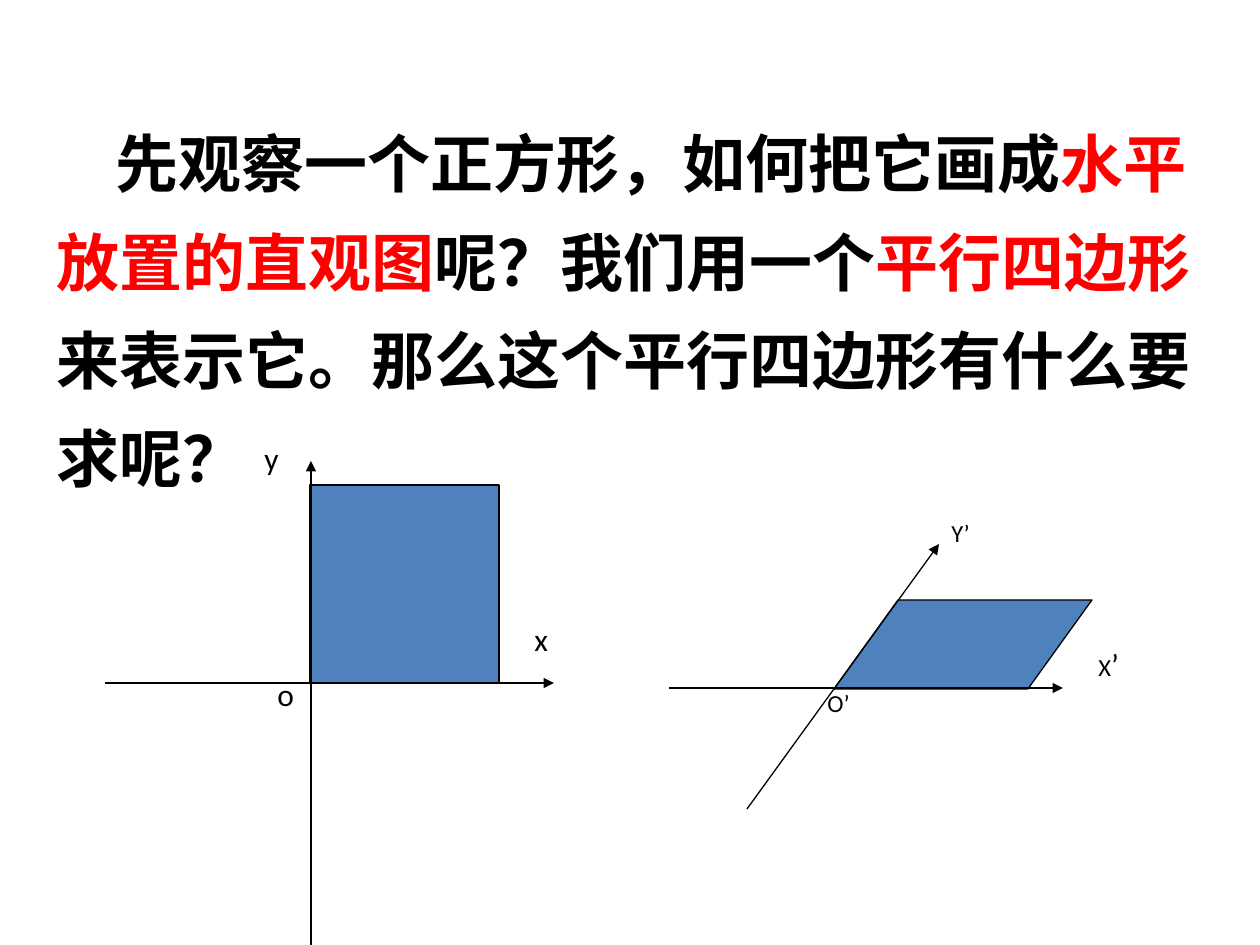
from lxml import etree
from pptx import Presentation
from pptx.dml.color import RGBColor
from pptx.enum.shapes import MSO_CONNECTOR, MSO_SHAPE
from pptx.enum.text import MSO_AUTO_SIZE
from pptx.oxml.ns import qn
from pptx.util import Emu, Pt

PX_PER_INCH = 126
BLACK = RGBColor(0x00, 0x00, 0x00)
RED = RGBColor(0xFF, 0x00, 0x00)
BLUE = RGBColor(0x4F, 0x81, 0xBD)


def px(length):
    return Emu(round(length * 914400 / PX_PER_INCH))


class SlideBuilder:
    label_font = "Calibri"
    body_font = "Times New Roman"
    line_width = Pt(0.75)

    def __init__(self, slide):
        self.slide = slide

    def figure(self, preset, left, top, width, height, slant=None):
        shape = self.slide.shapes.add_shape(
            preset, px(left), px(top), px(width), px(height))
        if slant is not None:
            shape.adjustments[0] = slant
        shape.shadow.inherit = False
        shape.fill.solid()
        shape.fill.fore_color.rgb = BLUE
        shape.line.color.rgb = BLACK
        shape.line.width = self.line_width

    def axis(self, start, end):
        """Draw a line with an arrowhead at its end."""
        connector = self.slide.shapes.add_connector(
            MSO_CONNECTOR.STRAIGHT, *map(px, start + end))
        connector.line.color.rgb = BLACK
        connector.line.width = self.line_width
        outline = connector.line._get_or_add_ln()
        etree.SubElement(outline, qn("a:tailEnd"), type="triangle")
        etree.SubElement(connector._element.spPr, qn("a:effectLst"))

    def text(self, left, top, width, height, pieces, font, bold=False):
        """Add one paragraph made of (text, point size, colour) pieces."""
        box = self.slide.shapes.add_textbox(
            px(left), px(top), px(width), px(height))
        frame = box.text_frame
        frame.word_wrap = True
        frame.auto_size = MSO_AUTO_SIZE.SHAPE_TO_FIT_TEXT
        paragraph = frame.paragraphs[0]
        for wording, size, color in pieces:
            run = paragraph.add_run()
            run.text = wording
            run.font.name = font
            run.font.size = Pt(size)
            run.font.bold = bold
            run.font.color.rgb = color
        return paragraph

    def label(self, left, top, width, height, *pieces):
        self.text(left, top, width, height,
                  [(wording, size, BLACK) for wording, size in pieces],
                  self.label_font)

    def question(self, left, top, width, height, pieces, indent):
        paragraph = self.text(left, top, width, height,
                              [(wording, 36, color) for wording, color in pieces],
                              self.body_font, bold=True)
        paragraph.line_spacing = 1.3
        paragraph._p.get_or_add_pPr().set("indent", str(px(indent)))


def main():
    presentation = Presentation()
    presentation.slide_width = px(1260)
    presentation.slide_height = px(945)
    slide = presentation.slides.add_slide(presentation.slide_layouts[6])
    builder = SlideBuilder(slide)

    # Square on upright axes
    builder.figure(MSO_SHAPE.RECTANGLE, 310, 485, 189, 198)
    builder.axis((105, 683), (554, 683))
    builder.axis((311, 948), (311, 461))
    builder.label(522, 614, 77, 50, ("x", 18))
    builder.label(252, 433, 77, 50, ("y", 18))
    builder.label(265, 669, 39, 50, ("o", 18))

    # Parallelogram on oblique axes
    builder.figure(MSO_SHAPE.PARALLELOGRAM, 834, 600, 258, 89, slant=0.72)
    builder.axis((669, 688), (1063, 688))
    builder.axis((747, 809), (939, 544))
    builder.label(1086, 639, 91, 50, ("X", 14), ("’", 18))
    builder.label(939, 512, 91, 42, ("Y’", 14))
    builder.label(815, 682, 79, 42, ("O’", 14))

    builder.question(44, 96, 1171, 407, [
        ("先观察一个正方形，如何把它画成", BLACK),
        ("水平放置的直观图", RED),
        ("呢？我们用一个", BLACK),
        ("平行四边形", RED),
        ("来表示它。那么这个平行四边形有什么要求呢？", BLACK),
    ], indent=59)

    presentation.save("out.pptx")


if __name__ == "__main__":
    main()
